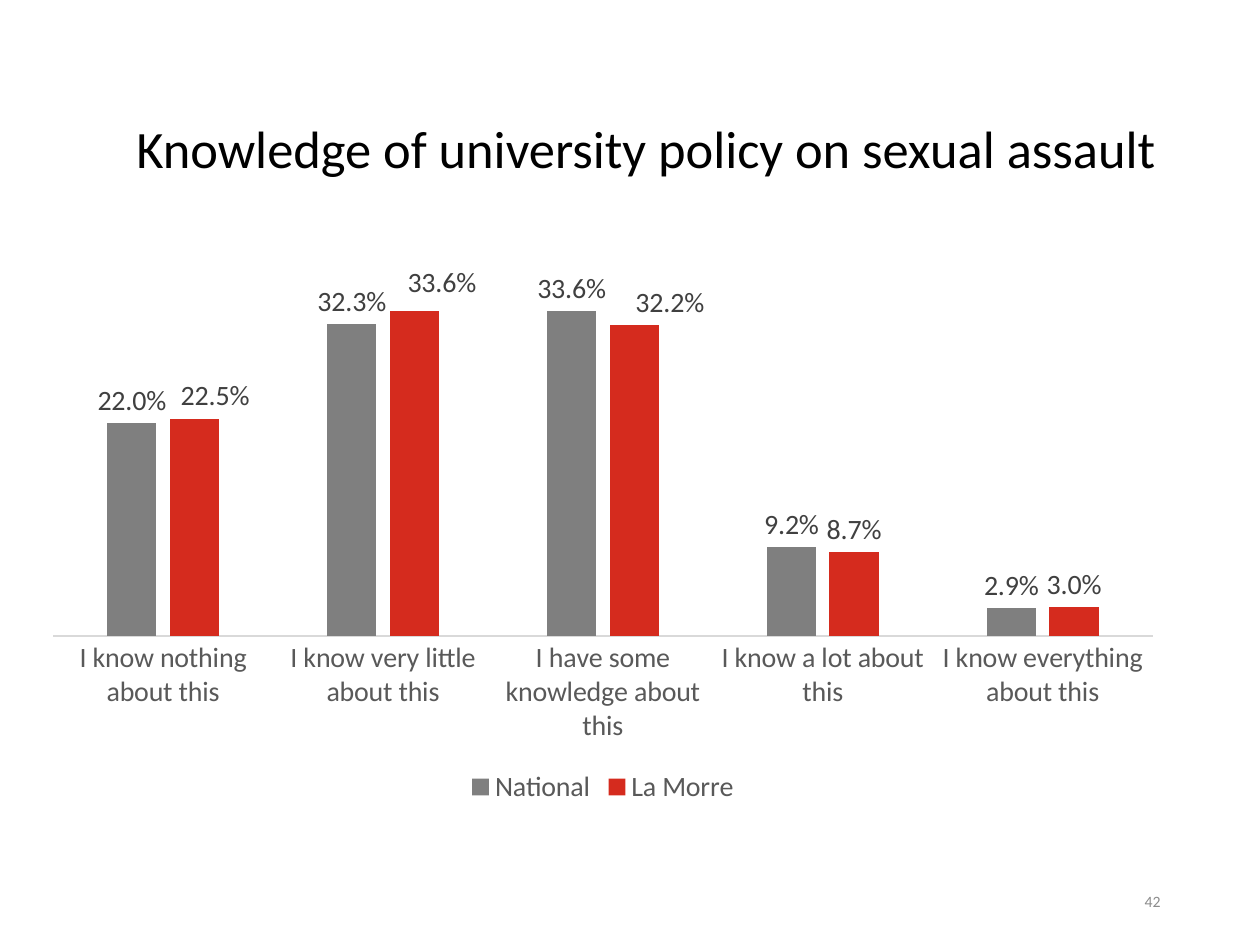
"""Build a slide comparing knowledge of university policy in a clustered column chart."""
from typing import NamedTuple

from lxml import etree
from pptx import Presentation
from pptx import util as u
from pptx.chart.data import CategoryChartData
from pptx.dml.color import RGBColor
from pptx.enum import chart as ch, text as t
from pptx.oxml import parse_xml
from pptx.oxml.ns import nsdecls, qn

WIDTH, HEIGHT = 10, 7.5
FONT = "Calibri"
PERCENT = "0.0%"
COLORS = {"title": "000000", "axis_text": "595959", "axis_line": "D9D9D9",
          "label": "404040", "number": "8C8C8C", "grey": "7F7F7F", "red": "D52B1E"}


class Area(NamedTuple):
    """A rectangle given as shares of its parent's size."""
    left: float
    top: float
    width: float
    height: float

    def emu(self) -> tuple[int, ...]:
        """Return the rectangle in slide lengths."""
        return tuple(u.Inches(share * side)
                     for share, side in zip(self, (WIDTH, HEIGHT) * 2))


class Series(NamedTuple):
    """A chart series with label shifts as shares of the chart's size."""
    name: str
    values: tuple[float, ...]
    color: str
    shifts: dict[int, tuple[float, float]]


TITLE = Area(0.025, 0.112, 0.976, 0.097)
CHART = Area(0.024, 0.252, 0.909, 0.605)
NUMBER = Area(0.706, 0.927, 0.225, 0.053)
PLOT = Area(0.02, 0.02, 0.96, 0.676)
CATEGORIES = ("I know nothing about this", "I know very little about this",
              "I have some knowledge about this", "I know a lot about this",
              "I know everything about this")
SERIES = (
    Series("National", (0.22, 0.323, 0.336, 0.092, 0.029), "grey", {}),
    Series("La Morre", (0.225, 0.336, 0.322, 0.087, 0.03), "red",
           {0: (0.018, 0), 1: (0.024, -0.01), 2: (0.031, 0)}),
)


def style_font(font, size: float, color: str) -> None:
    """Set the typeface, size and colour of a font."""
    font.name, font.size, font.bold = FONT, u.Pt(size), False
    font.color.rgb = RGBColor.from_string(COLORS[color])


def write_text(box, text: str, *, size: float, color: str, align, spacing: float = 1) -> None:
    """Fill a box with one formatted paragraph, centred vertically."""
    frame = box.text_frame
    frame.word_wrap = True
    frame.auto_size = t.MSO_AUTO_SIZE.NONE
    frame.vertical_anchor = t.MSO_ANCHOR.MIDDLE
    para = frame.paragraphs[0]
    para.alignment, para.line_spacing = align, spacing
    span = para.add_run()
    span.text = text
    style_font(span.font, size, color)


def manual_layout(**settings):
    """Return a chart layout element with the given settings."""
    layout = parse_xml(f"<c:layout {nsdecls('c')}><c:manualLayout/></c:layout>")
    for name, value in settings.items():
        etree.SubElement(layout[0], qn(f"c:{name}")).set("val", str(value))
    return layout


def format_series(plotted, series: Series) -> None:
    """Colour one series and place its value labels."""
    plotted.format.fill.solid()
    plotted.format.fill.fore_color.rgb = RGBColor.from_string(COLORS[series.color])
    labels = plotted.data_labels
    labels.show_value = True
    labels.number_format, labels.number_format_is_linked = PERCENT, False
    labels.position = ch.XL_LABEL_POSITION.OUTSIDE_END
    style_font(labels.font, 16, "label")
    for index, (x, y) in series.shifts.items():
        label = plotted.points[index].data_label
        style_font(label.font, 16, "label")
        label.position = ch.XL_LABEL_POSITION.OUTSIDE_END
        entry = labels._element.find(f"{qn('c:dLbl')}[{qn('c:idx')}][{index + 1}]")
        entry.insert(1, manual_layout(x=x, y=y))


def add_column_chart(page) -> None:
    """Add the chart with its axes, legend and series."""
    data = CategoryChartData(number_format=PERCENT)
    data.categories = CATEGORIES
    for series in SERIES:
        data.add_series(series.name, series.values)
    chart = page.shapes.add_chart(ch.XL_CHART_TYPE.COLUMN_CLUSTERED, *CHART.emu(), data).chart
    style_font(chart.font, 10, "title")
    chart.has_title = False
    chart.has_legend = True
    chart.legend.position = ch.XL_LEGEND_POSITION.BOTTOM
    chart.legend.include_in_layout = False
    style_font(chart.legend.font, 16, "axis_text")

    axis = chart.category_axis
    axis.major_tick_mark = axis.minor_tick_mark = ch.XL_TICK_MARK.NONE
    style_font(axis.tick_labels.font, 16, "axis_text")
    axis.format.line.color.rgb = RGBColor.from_string(COLORS["axis_line"])
    axis.format.line.width = u.Pt(0.75)
    values = chart.value_axis
    values.visible = values.has_major_gridlines = False
    values.minimum_scale, values.maximum_scale = 0, 0.4

    plot = chart.plots[0]
    plot.gap_width, plot.overlap, plot.vary_by_categories = 219, -27, False
    for plotted, series in zip(plot.series, SERIES):
        format_series(plotted, series)
    area = chart._chartSpace.chart.plotArea
    for old in area.findall(qn("c:layout")):
        area.remove(old)
    area.insert(0, manual_layout(layoutTarget="inner", xMode="edge", yMode="edge",
                                 x=PLOT.left, y=PLOT.top, w=PLOT.width, h=PLOT.height))


def main() -> None:
    """Build and save the deck."""
    deck = Presentation()
    deck.slide_width, deck.slide_height = u.Inches(WIDTH), u.Inches(HEIGHT)
    page = deck.slides.add_slide(deck.slide_layouts[5])
    title = page.shapes.title
    title.left, title.top, title.width, title.height = TITLE.emu()
    write_text(title, "Knowledge of university policy on sexual assault",
               size=30, color="title", align=t.PP_ALIGN.CENTER, spacing=0.9)
    add_column_chart(page)
    write_text(page.shapes.add_textbox(*NUMBER.emu()), "42",
               size=9, color="number", align=t.PP_ALIGN.RIGHT)
    deck.save("out.pptx")


if __name__ == "__main__":
    main()
